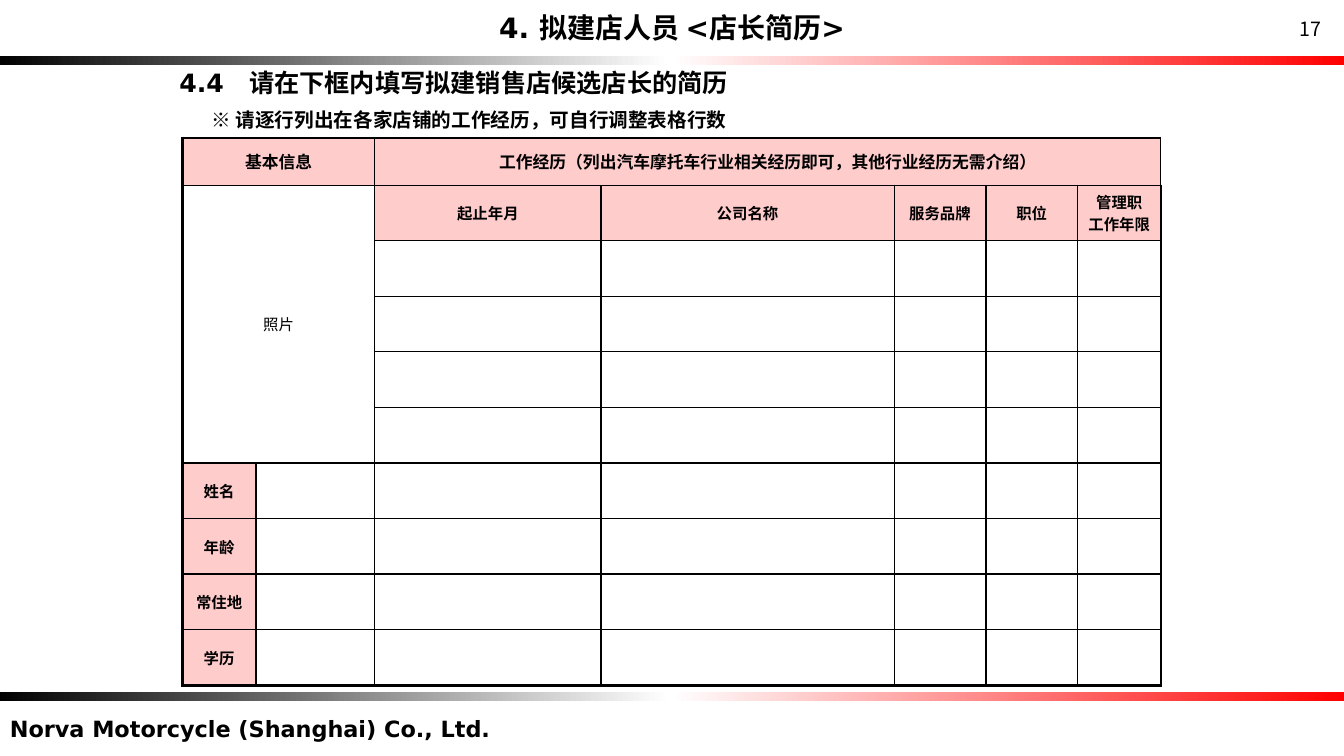
from copy import deepcopy

from lxml.etree import SubElement
from pptx import Presentation
from pptx.dml.color import RGBColor
from pptx.enum.shapes import MSO_SHAPE
from pptx.enum.text import MSO_ANCHOR, PP_ALIGN
from pptx.oxml import parse_xml
from pptx.oxml.ns import nsdecls, qn
from pptx.util import Pt

COLORS = {"ink": "000000", "paper": "FFFFFF", "red": "FF0000", "pink": "FFCCCC"}
LATIN, CJK = "DejaVu Sans", "Noto Sans CJK JP"
SLIDE_W, SLIDE_H = 960, 540

COL_WIDTHS = [52.5, 85, 161.5, 209.5, 65.5, 65.5, 59.5]
HEADER_H, ROW_H, ROW_COUNT = 33.7, 39.7, 10
THIN, THICK = 1, 2.25
# (first row, first column, last row, last column)
MERGES = [(0, 0, 0, 1), (0, 2, 0, 6), (1, 0, 5, 1)]
SECTION_HEADS = {
    (0, 0): "基本信息",
    (0, 2): "工作经历（列出汽车摩托车行业相关经历即可，其他行业经历无需介绍）",
}
COLUMN_HEADS = ["起止年月", "公司名称", "服务品牌", "职位", "管理职\n工作年限"]
ROW_HEADS = ["姓名", "年龄", "常住地", "学历"]


def rgb(name):
    return RGBColor.from_string(COLORS[name])


def write(tf, text, size, bold=True, align=PP_ALIGN.LEFT, font=LATIN):
    tf.text = text
    for p in tf.paragraphs:
        p.alignment = align
        for r in p.runs:
            r.font.size, r.font.bold, r.font.name = Pt(size), bold, font
            r.font.color.rgb = rgb("ink")
            SubElement(r.font._element, qn("a:ea"), typeface=CJK)


def add_text(slide, box, text, size, anchor=MSO_ANCHOR.MIDDLE, **style):
    tf = slide.shapes.add_textbox(*map(Pt, box)).text_frame
    tf.word_wrap = True
    tf.vertical_anchor = anchor
    write(tf, text, size, **style)


def add_gradient_bar(slide, box):
    sp = slide.shapes.add_shape(MSO_SHAPE.RECTANGLE, *map(Pt, box))
    sp.shadow.inherit = False
    sp.line.fill.background()
    sp.fill.gradient()
    sp.fill.gradient_angle = 0
    stops = sp._element.spPr.find(qn("a:gradFill")).find(qn("a:gsLst"))
    stops.insert(1, deepcopy(stops[0]))
    stops[1].set("pos", "50000")
    for stop, name in zip(sp.fill.gradient_stops, ("ink", "paper", "red")):
        stop.color.rgb = rgb(name)


def add_header(slide, box):
    x, y, w, h = box
    add_text(slide, (x + 274.5, y + 7.2, 411, 24), "4. 拟建店人员 <店长简历>", 20,
             align=PP_ALIGN.CENTER)
    add_text(slide, (x + w - 47.8, y + 8.6, 47.5, 24.5), "17", 14, MSO_ANCHOR.TOP,
             bold=False, align=PP_ALIGN.CENTER, font=CJK)
    add_gradient_bar(slide, (x - 3.6, y + h - 6, w + 4, 6))


def add_footer(slide, box):
    x, y, w, h = box
    add_gradient_bar(slide, (x - 3, y, w + 4, 6))
    add_text(slide, (x, y + 13, 532, 26.6), "Norva Motorcycle (Shanghai) Co., Ltd.",
             16, MSO_ANCHOR.TOP)


def add_instructions(slide, box):
    x, y, w, h = box
    add_text(slide, (x, y, w, 28.8), "4.4　请在下框内填写拟建销售店候选店长的简历", 18)
    add_text(slide, (x + 23, y + 28.8, w - 23, 24.5),
             "※ 请逐行列出在各家店铺的工作经历，可自行调整表格行数", 14)


def set_borders(cell, widths):
    tc_pr = cell._tc.get_or_add_tcPr()
    for i, (side, width) in enumerate(zip("LRTB", widths)):
        tc_pr.insert(i, parse_xml(
            f'<a:ln{side} {nsdecls("a")} w="{Pt(width)}"><a:solidFill>'
            f'<a:srgbClr val="{COLORS["ink"]}"/></a:solidFill></a:ln{side}>'))


def fill_cell(cell, text, size=11, bold=True, head=True, tight=False):
    write(cell.text_frame, text, size, bold, PP_ALIGN.CENTER)
    if head:
        cell.fill.solid()
        cell.fill.fore_color.rgb = rgb("pink")
    if tight:
        cell.margin_left = cell.margin_right = Pt(1.5)
        cell.margin_top = cell.margin_bottom = Pt(1.5)


def add_resume_table(slide, box):
    last_row, last_col = ROW_COUNT - 1, len(COL_WIDTHS) - 1
    frame = slide.shapes.add_table(ROW_COUNT, len(COL_WIDTHS), *map(Pt, box))
    table = frame.table
    table.first_row = table.horz_banding = False
    for col, width in zip(table.columns, COL_WIDTHS):
        col.width = Pt(width)
    for i, row in enumerate(table.rows):
        row.height = Pt(ROW_H if i else HEADER_H)

    # Grid: thin inside, thick around the outside
    for r in range(ROW_COUNT):
        for c in range(len(COL_WIDTHS)):
            cell = table.cell(r, c)
            cell.vertical_anchor = MSO_ANCHOR.MIDDLE
            cell.fill.background()
            outer = (c == 0, c == last_col, r == 0, r == last_row)
            set_borders(cell, [THICK if edge else THIN for edge in outer])
    for r1, c1, r2, c2 in MERGES:
        table.cell(r1, c1).merge(table.cell(r2, c2))

    # Headings and photo area
    for (r, c), text in SECTION_HEADS.items():
        fill_cell(table.cell(r, c), text, size=12, tight=True)
    for c, text in enumerate(COLUMN_HEADS, 2):
        fill_cell(table.cell(1, c), text, tight=text == "服务品牌")
    for r, text in enumerate(ROW_HEADS, 6):
        fill_cell(table.cell(r, 0), text)
    fill_cell(table.cell(1, 0), "照片", bold=False, head=False)


def main():
    prs = Presentation()
    prs.slide_width, prs.slide_height = Pt(SLIDE_W), Pt(SLIDE_H)
    slide = prs.slides.add_slide(prs.slide_layouts[6])
    add_header(slide, (0, 0, SLIDE_W, 46.3))
    add_footer(slide, (0, 494.6, SLIDE_W, 45.4))
    add_instructions(slide, (121, 44.6, 417.6, 53.3))
    table_h = HEADER_H + ROW_H * (ROW_COUNT - 1)
    add_resume_table(slide, (130.3, 98.6, sum(COL_WIDTHS), table_h))
    prs.save("out.pptx")


if __name__ == "__main__":
    main()
